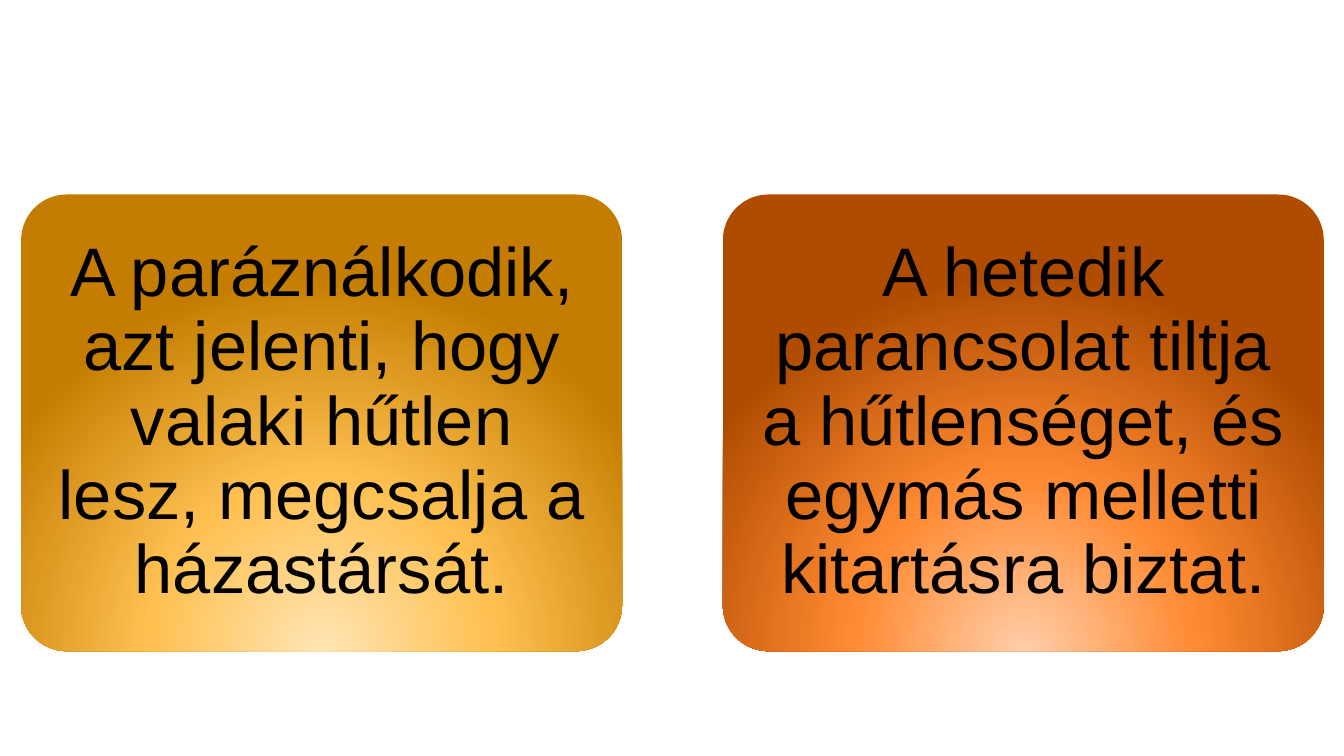
"""Builds a slide with two glowing cards about the seventh commandment."""
from pptx import Presentation, util as u
from pptx.dml import color
from pptx.enum import shapes, text
from pptx.oxml import parse_xml, ns

CARDS = [
    ("A paráználkodik, azt jelenti, hogy valaki hűtlen lesz, megcsalja a házastársát.", "gold"),
    ("A hetedik parancsolat tiltja a hűtlenséget, és egymás melletti kitartásra biztat.", "rust"),
]
THEME = {
    "gold": ("FFE5B5", "FFC050", "C47D00"),
    "rust": ("FFCEA9", "FF8A32", "B04C00"),
    "ink": "000000",
    "font": "Arial",
    "size": 49,
}
STOPS = (0, 46, 100)
LEFT, TOP, WIDE, HIGH, GAP = 0.21, 1.93, 5.96, 4.53, 1
ROUND, INSET = 0.1, 0.2


def glow(shape, tones):
    """Fill a shape with a radial gradient centred below its middle."""
    stops = "".join(
        f'<a:gs pos="{pos * 1000}"><a:srgbClr val="{tone}"/></a:gs>'
        for pos, tone in zip(STOPS, tones)
    )
    shape.element.spPr.insert(2, parse_xml(
        f'<a:gradFill {ns.nsdecls("a")} rotWithShape="1"><a:gsLst>{stops}</a:gsLst>'
        '<a:path path="circle">'
        '<a:fillToRect l="50000" t="130000" r="50000" b="-30000"/>'
        '</a:path></a:gradFill>'
    ))


def card(slide, left, words, tone):
    """Draw one rounded card with its centred text."""
    shape = slide.shapes.add_shape(
        shapes.MSO_SHAPE.ROUNDED_RECTANGLE,
        u.Inches(left), u.Inches(TOP), u.Inches(WIDE), u.Inches(HIGH),
    )
    shape.adjustments[0] = ROUND
    shape.shadow.inherit = False
    shape.line.fill.background()
    glow(shape, THEME[tone])
    frame = shape.text_frame
    frame.word_wrap = True
    frame.vertical_anchor = text.MSO_ANCHOR.MIDDLE
    frame.margin_left = frame.margin_right = u.Inches(INSET)
    frame.margin_top = frame.margin_bottom = u.Inches(INSET)
    para = frame.paragraphs[0]
    para.alignment = text.PP_ALIGN.CENTER
    para.line_spacing = 0.9
    run = para.add_run()
    run.text = words
    run.font.name = THEME["font"]
    run.font.size = u.Pt(THEME["size"])
    run.font.color.rgb = color.RGBColor.from_string(THEME["ink"])


def main():
    """Lay the cards out in a row and save the deck."""
    deck = Presentation()
    deck.slide_width, deck.slide_height = u.Inches(13.33), u.Inches(7.5)
    slide = deck.slides.add_slide(deck.slide_layouts[6])
    for i, (words, tone) in enumerate(CARDS):
        card(slide, LEFT + i * (WIDE + GAP), words, tone)
    deck.save("out.pptx")


if __name__ == "__main__":
    main()
